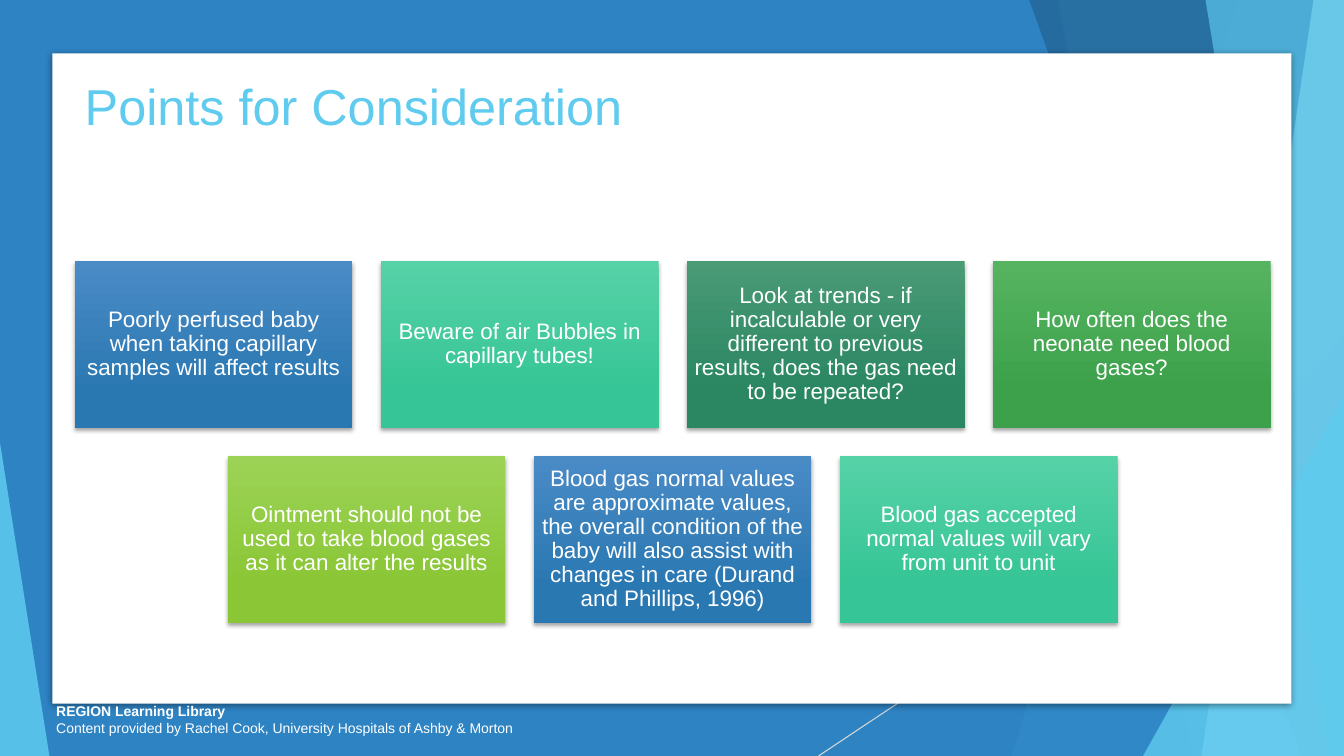
"""Build the slide of points to consider when taking neonatal blood gases."""
from typing import NamedTuple

from lxml.etree import SubElement
from pptx import Presentation
from pptx.dml.color import RGBColor
from pptx.enum.shapes import MSO_CONNECTOR as Connector, MSO_SHAPE as Preset
from pptx.enum.text import MSO_ANCHOR as Anchor, PP_ALIGN as Align
from pptx.oxml.ns import qn
from pptx.shapes.autoshape import Shape
from pptx.slide import Slide
from pptx.text.text import TextFrame
from pptx.util import Inches, Length, Pt

WIDTH, HEIGHT = Inches(13.333), Inches(7.5)
FONT = "Arial"
WHITE = RGBColor(0xFF, 0xFF, 0xFF)
SILVER = RGBColor(0xD9, 0xD9, 0xD9)
SKY = RGBColor(0x5F, 0xCB, 0xEF)
PALE_SKY = RGBColor(0x9F, 0xE0, 0xF5)
BLUE = RGBColor(0x2E, 0x83, 0xC3)
NAVY = RGBColor(0x22, 0x62, 0x92)

AZURE = RGBColor(0x4A, 0x8B, 0xC6), RGBColor(0x2A, 0x78, 0xB2)
MINT = RGBColor(0x56, 0xD2, 0xA7), RGBColor(0x36, 0xC5, 0x96)
PINE = RGBColor(0x4A, 0x9A, 0x76), RGBColor(0x2A, 0x87, 0x62)
GREEN = RGBColor(0x56, 0xB4, 0x61), RGBColor(0x3C, 0xA1, 0x4A)
LIME = RGBColor(0x9C, 0xD3, 0x56), RGBColor(0x8A, 0xC6, 0x35)


class Area(NamedTuple):
    """Left, top, width and height in percent of the slide."""
    left: float
    top: float
    width: float
    height: float


class Band(NamedTuple):
    """A pane reaching the right edge, with its left side at top and bottom."""
    top_left: float
    bottom_left: float
    color: RGBColor
    opacity: int


class Wedge(NamedTuple):
    """A right triangle with its apex at a share of its width."""
    area: Area
    apex: int
    color: RGBColor
    opacity: int


class Card(NamedTuple):
    """A point and the two shades behind it."""
    text: str
    shades: tuple[RGBColor, RGBColor]


PANEL = Area(3.9, 7.07, 92.18, 86)
TITLE = Area(5.55, 8.93, 70.5, 10.93)
FOOTER = Area(3.45, 92.27, 51.68, 5.33)
FIRST_CARD = Area(5.55, 34.53, 20.68, 22.06)
COLUMN, ROW, COLUMNS = 22.77, 25.77, 4

FACETS = [
    Band(92.1, 75.3, SKY, 30),
    Band(78.75, 88.73, SKY, 20),
    Wedge(Area(73.28, 44.4, 26.72, 55.6), 1, BLUE, 72),
    Band(76.58, 96.83, NAVY, 70),
    Band(97.73, 89.4, PALE_SKY, 70),
    Band(89.7, 98.85, SKY, 65),
    Wedge(Area(85.05, 52.4, 14.95, 47.6), 1, SKY, 80),
    Wedge(Area(0, 58.53, 3.68, 41.47), 0, SKY, 85),
]
CARD_ROWS = [
    [
        Card("Poorly perfused baby when taking capillary samples will affect results", AZURE),
        Card("Beware of air Bubbles in capillary tubes!", MINT),
        Card("Look at trends - if incalculable or very different to previous results, "
             "does the gas need to be repeated?", PINE),
        Card("How often does the neonate need blood gases?", GREEN),
    ],
    [
        Card("Ointment should not be used to take blood gases as it can alter the results", LIME),
        Card("Blood gas normal values are approximate values, the overall condition of the baby "
             "will also assist with changes in care (Durand and Phillips, 1996)", AZURE),
        Card("Blood gas accepted normal values will vary from unit to unit", MINT),
    ],
]


def across(percent: float) -> Length:
    """Turn a percentage of the slide's width into a length."""
    return Length(round(WIDTH * percent / 100))


def down(percent: float) -> Length:
    """Turn a percentage of the slide's height into a length."""
    return Length(round(HEIGHT * percent / 100))


def frame(area: Area) -> tuple[Length, Length, Length, Length]:
    """Turn an area into left, top, width and height."""
    return across(area.left), down(area.top), across(area.width), down(area.height)


def paint(shape: Shape, color: RGBColor, opacity: int = 100) -> None:
    """Fill a shape without an outline or shadow."""
    shape.shadow.inherit = False
    shape.line.fill.background()
    shape.fill.solid()
    shape.fill.fore_color.rgb = color
    if opacity < 100:
        tint = shape.element.spPr.find(qn("a:solidFill")).find(qn("a:srgbClr"))
        SubElement(tint, qn("a:alpha"), val=str(opacity * 1000))


def cast_shadow(shape: Shape, *, opacity: int, blur: float, distance: float) -> None:
    """Drop a soft black shadow straight below a shape."""
    effects = shape.element.spPr.find(qn("a:effectLst"))
    shadow = SubElement(effects, qn("a:outerShdw"), blurRad=str(Pt(blur)),
                        dist=str(Pt(distance)), dir="5400000", rotWithShape="0")
    tint = SubElement(shadow, qn("a:srgbClr"), val="000000")
    SubElement(tint, qn("a:alpha"), val=str(opacity * 1000))


def write(text_frame: TextFrame, text: str, *, size: int, color: RGBColor = WHITE,
          bold: bool = False, align: Align = Align.LEFT, spacing: float = 1.0,
          anchor: Anchor = Anchor.TOP, more: bool = False) -> None:
    """Write one formatted paragraph, after the present ones if more is set."""
    text_frame.word_wrap = True
    text_frame.vertical_anchor = anchor
    para = text_frame.add_paragraph() if more else text_frame.paragraphs[0]
    para.alignment, para.line_spacing = align, spacing
    span = para.add_run()
    span.text = text
    span.font.name, span.font.size, span.font.bold = FONT, Pt(size), bold
    span.font.color.rgb = color


def add_rectangle(page: Slide, area: Area, color: RGBColor) -> Shape:
    """Add a plain filled rectangle."""
    box = page.shapes.add_shape(Preset.RECTANGLE, *frame(area))
    paint(box, color)
    return box


def add_facet(page: Slide, facet: Band | Wedge) -> None:
    """Add one translucent facet of the backdrop."""
    if isinstance(facet, Wedge):
        shape = page.shapes.add_shape(Preset.ISOSCELES_TRIANGLE, *frame(facet.area))
        shape.adjustments[0] = facet.apex
    else:
        builder = page.shapes.build_freeform(across(facet.top_left), 0)
        builder.add_line_segments([(WIDTH, 0), (WIDTH, HEIGHT),
                                   (across(facet.bottom_left), HEIGHT)])
        shape = builder.convert_to_shape()
    paint(shape, facet.color, facet.opacity)


def add_backdrop(page: Slide) -> None:
    """Add the blue ground, its thin diagonal and its facets."""
    add_rectangle(page, Area(0, 0, 100, 100), BLUE)
    diagonal = page.shapes.add_connector(Connector.STRAIGHT, WIDTH, down(53.73),
                                         across(60.9), HEIGHT)
    diagonal.line.color.rgb, diagonal.line.width = SILVER, Pt(0.75)
    SubElement(diagonal.element.spPr, qn("a:effectLst"))
    for facet in FACETS:
        add_facet(page, facet)


def add_card(page: Slide, card: Card, area: Area) -> None:
    """Add a shaded card with its centred text."""
    box = add_rectangle(page, area, card.shades[0])
    box.fill.gradient()
    box.fill.gradient_angle = 270
    for stop, shade, position in zip(box.fill.gradient_stops, card.shades, (0, 0.78)):
        stop.color.rgb, stop.position = shade, position
    cast_shadow(box, opacity=35, blur=3, distance=2)
    text_frame = box.text_frame
    text_frame.margin_left = text_frame.margin_right = Inches(0.07)
    text_frame.margin_top = text_frame.margin_bottom = Inches(0.07)
    write(text_frame, card.text, size=16, align=Align.CENTER, spacing=0.9, anchor=Anchor.MIDDLE)


def main() -> None:
    """Build and save the deck."""
    deck = Presentation()
    deck.slide_width, deck.slide_height = WIDTH, HEIGHT
    page = deck.slides.add_slide(deck.slide_layouts[5])
    add_backdrop(page)
    panel = add_rectangle(page, PANEL, WHITE)
    cast_shadow(panel, opacity=43, blur=5, distance=1.4)

    title = page.shapes.title
    title.left, title.top, title.width, title.height = frame(TITLE)
    write(title.text_frame, "Points for Consideration", size=36, color=SKY,
          spacing=0.9, anchor=Anchor.MIDDLE)
    panel.element.addnext(title.element)

    for row, cards in enumerate(CARD_ROWS):
        indent = (COLUMNS - len(cards)) / 2
        for column, card in enumerate(cards):
            add_card(page, card, FIRST_CARD._replace(
                left=FIRST_CARD.left + (column + indent) * COLUMN,
                top=FIRST_CARD.top + row * ROW))

    footer = page.shapes.add_textbox(*frame(FOOTER)).text_frame
    write(footer, "REGION Learning Library", size=10, bold=True)
    write(footer, "Content provided by Rachel Cook, University Hospitals of Ashby & Morton",
          size=10, more=True)
    deck.save("out.pptx")


if __name__ == "__main__":
    main()
